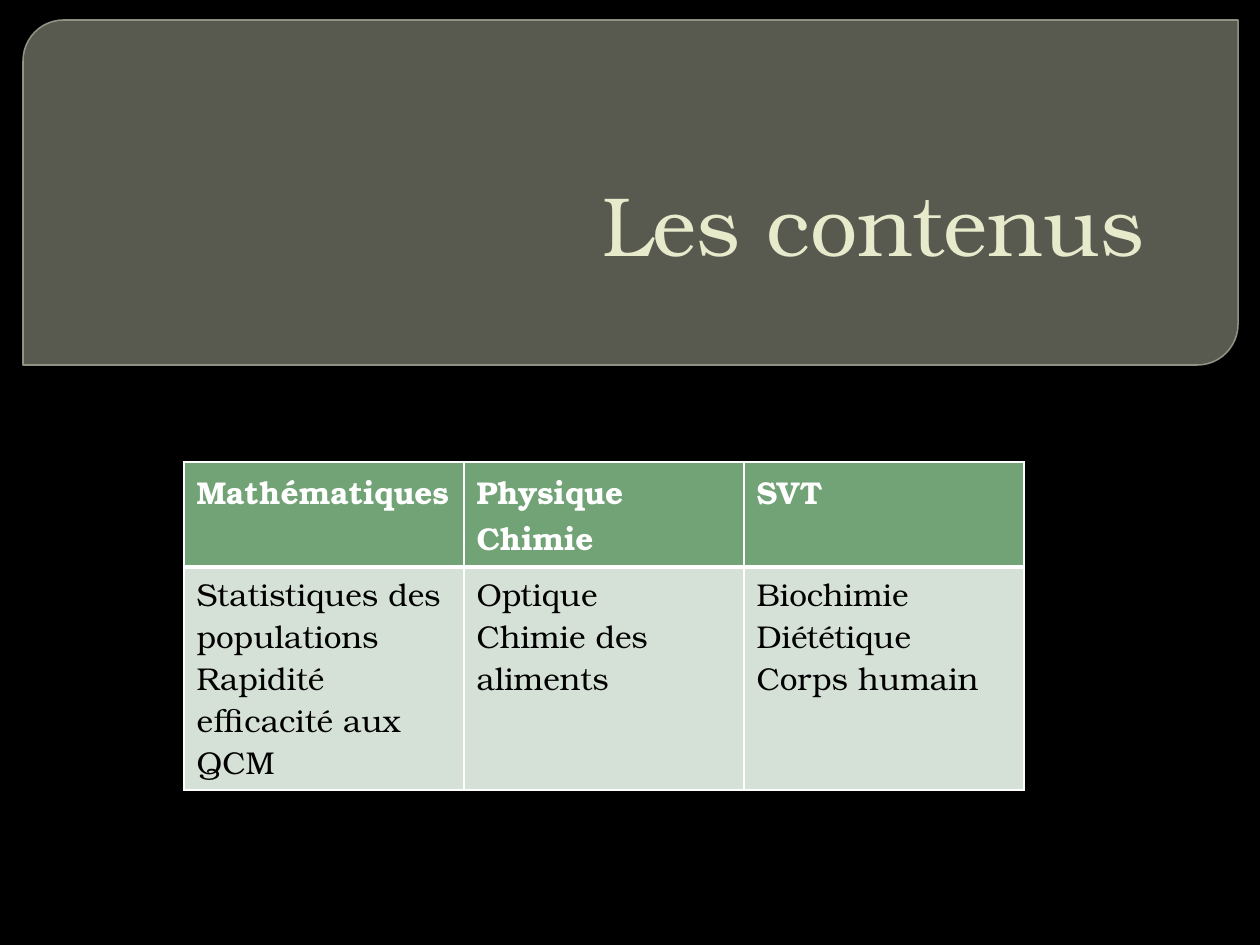
"""Build the slide "Les contenus": a title panel above a table of subjects."""
from lxml.etree import SubElement
from pptx import Presentation
from pptx.dml.color import RGBColor as RGB
from pptx.enum.shapes import MSO_SHAPE as Shape
from pptx.enum.text import MSO_ANCHOR as Anchor, MSO_AUTO_SIZE as AutoSize, PP_ALIGN as Align
from pptx.oxml.ns import qn
from pptx.util import Pt

TITLE = "Les contenus"
SUBJECTS = [
    ("Mathématiques", ["Statistiques des populations", "Rapidité efficacité aux QCM"]),
    ("Physique Chimie", ["Optique", "Chimie des aliments"]),
    ("SVT", ["Biochimie", "Diététique", "Corps humain"]),
]
THEME = {
    "font": "TeX Gyre Bonum",
    "background": "000000",
    "panel": "888B7B",
    "panel_line": "9DA090",
    "border": "FFFFFF",
    "title": {"size": 48, "bold": False, "color": "E7EACB"},
    "header": {"size": 18, "bold": True, "color": "FFFFFF", "fill": "72A376"},
    "body": {"size": 18, "bold": False, "color": "000000", "fill": "D5E0D6"},
}
SLIDE = (1260, 945)
PANEL_BOX = (23, 20, 1215, 345)
TITLE_BOX = (105, 76, 1071, 203)
TABLE_LEFT, TABLE_TOP = 184, 462
COLUMN_WIDTH = 280
ROW_HEIGHTS = (105, 223)
THIN, THICK = 1, 3


def px(n):
    return round(n * 914400 / 126)


def box(lengths):
    return [px(n) for n in lengths]


def set_attrs(obj, values):
    for name, value in values.items():
        setattr(obj, name, value)


def set_fill(fill, color):
    fill.solid()
    fill.fore_color.rgb = RGB.from_string(color)


def set_alpha(parent, percent):
    color = next(parent.iter(qn("a:srgbClr")))
    SubElement(color, qn("a:alpha"), val=str(percent * 1000))


def write(tf, lines, style, align):
    for i, line in enumerate(lines):
        p = tf.paragraphs[0] if i == 0 else tf.add_paragraph()
        p.alignment = align
        r = p.add_run()
        r.text = line
        set_attrs(r.font, {"name": THEME["font"], "size": Pt(style["size"]), "bold": style["bold"]})
        r.font.color.rgb = RGB.from_string(style["color"])


def set_borders(cell, widths):
    tc_pr = cell._tc.get_or_add_tcPr()
    for side, width in zip("LRTB", widths):
        ln = SubElement(tc_pr, qn(f"a:ln{side}"), w=str(Pt(width)))
        fill = SubElement(ln, qn("a:solidFill"))
        SubElement(fill, qn("a:srgbClr"), val=THEME["border"])


def add_panel(s):
    sp = s.shapes.add_shape(Shape.ROUND_2_DIAG_RECTANGLE, *box(PANEL_BOX))
    sp.shadow.inherit = False
    sp.adjustments[0], sp.adjustments[1] = 0.118, 0
    set_fill(sp.fill, THEME["panel"])
    set_fill(sp.line.fill, THEME["panel_line"])
    sp.line.width = Pt(0.87)
    sp_pr = sp._element.spPr
    set_alpha(sp_pr.find(qn("a:solidFill")), 65)
    set_alpha(sp_pr.find(qn("a:ln")), 88)
    s.shapes._spTree.insert(2, sp._element)


def add_title(s):
    sp = s.shapes.title
    set_attrs(sp, dict(zip(("left", "top", "width", "height"), box(TITLE_BOX))))
    tf = sp.text_frame
    set_attrs(tf, {
        "auto_size": AutoSize.NONE, "word_wrap": True, "vertical_anchor": Anchor.BOTTOM,
        "margin_left": px(6), "margin_top": px(6), "margin_right": px(32), "margin_bottom": px(6),
    })
    write(tf, [TITLE], THEME["title"], Align.RIGHT)


def add_subjects(s):
    size = (COLUMN_WIDTH * len(SUBJECTS), sum(ROW_HEIGHTS))
    table = s.shapes.add_table(2, len(SUBJECTS), *box((TABLE_LEFT, TABLE_TOP, *size))).table
    for row, height in zip(table.rows, ROW_HEIGHTS):
        row.height = px(height)
    for c, (subject, topics) in enumerate(SUBJECTS):
        table.columns[c].width = px(COLUMN_WIDTH)
        parts = (
            ([subject], "header", (THIN, THIN, THIN, THICK)),
            (topics, "body", (THIN, THIN, THICK, THIN)),
        )
        for r, (lines, style, widths) in enumerate(parts):
            cell = table.cell(r, c)
            write(cell.text_frame, lines, THEME[style], Align.LEFT)
            set_borders(cell, widths)
            set_fill(cell.fill, THEME[style]["fill"])


def main():
    prs = Presentation()
    prs.slide_width, prs.slide_height = box(SLIDE)
    s = prs.slides.add_slide(prs.slide_layouts[0])
    set_fill(s.background.fill, THEME["background"])
    subtitle = s.placeholders[1]._element
    subtitle.getparent().remove(subtitle)
    add_panel(s)
    add_title(s)
    add_subjects(s)
    prs.save("out.pptx")


if __name__ == "__main__":
    main()
